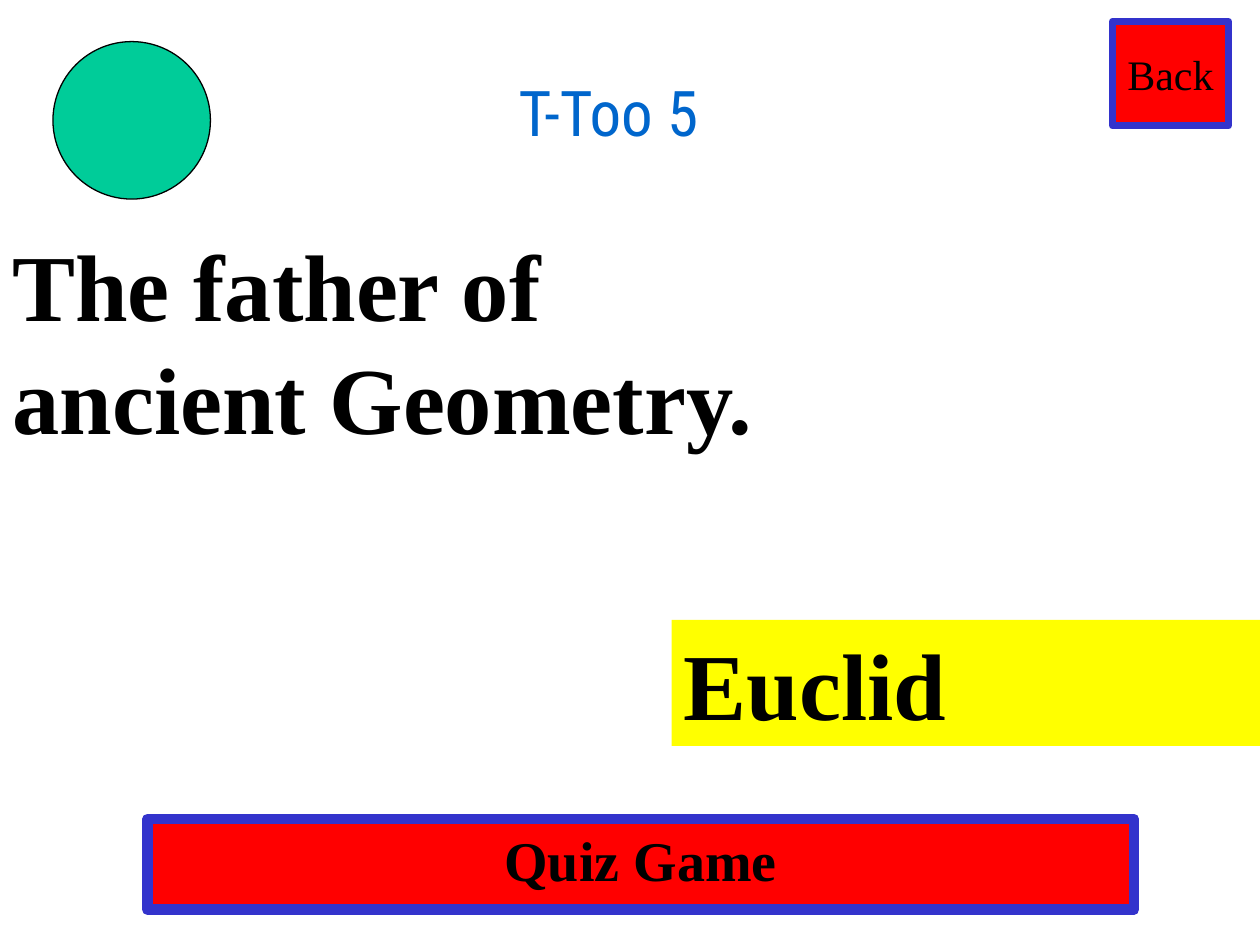
"""Build a quiz question slide with an answer bar and navigation buttons."""
from dataclasses import dataclass
from typing import Optional

from pptx import Presentation
from pptx.dml.color import RGBColor
from pptx.enum.shapes import MSO_SHAPE
from pptx.enum.text import MSO_ANCHOR, MSO_AUTO_SIZE, PP_ALIGN
from pptx.util import Inches, Pt

RED = RGBColor(0xFF, 0x00, 0x00)
BLUE = RGBColor(0x33, 0x33, 0xCC)
YELLOW = RGBColor(0xFF, 0xFF, 0x00)
GREEN = RGBColor(0x00, 0xCC, 0x99)
BLACK = RGBColor(0x00, 0x00, 0x00)
TITLE_BLUE = RGBColor(0x00, 0x66, 0xCC)
SERIF = "Times New Roman"


@dataclass
class Box:
    at: tuple[float, float, float, float]
    text: str = ""
    size: int = 54
    bold: bool = True
    align: PP_ALIGN = PP_ALIGN.LEFT
    anchor: MSO_ANCHOR = MSO_ANCHOR.TOP
    wrap: bool = True
    before: int = 0
    fill: Optional[RGBColor] = None
    line: Optional[RGBColor] = None
    width: float = 0
    shape: MSO_SHAPE = MSO_SHAPE.RECTANGLE


BOXES = [
    Box((1.17, 6.5, 7.83, 0.72), "Quiz Game", 32, align=PP_ALIGN.CENTER,
        before=4, fill=RED, line=BLUE, width=6),
    Box((8.83, 0.17, 0.92, 0.83), "Back", 24, False, PP_ALIGN.CENTER,
        MSO_ANCHOR.MIDDLE, wrap=False, fill=RED, line=BLUE, width=4),
    Box((0, 1.75, 6.67, 1.9), "The father of ancient Geometry.", before=6),
    Box((5.33, 4.92, 4.67, 1), "Euclid", before=6, fill=YELLOW),
    Box((0.42, 0.33, 1.25, 1.25), fill=GREEN, line=BLACK, width=0.75,
        shape=MSO_SHAPE.OVAL),
]


def set_all(obj, values: dict) -> None:
    """Set each named attribute on the object."""
    for name, value in values.items():
        setattr(obj, name, value)


def write(sp, text: str, frame: dict, para: dict, font: dict, color: RGBColor) -> None:
    """Fill a shape with one formatted paragraph."""
    tf = sp.text_frame
    set_all(tf, {"auto_size": MSO_AUTO_SIZE.NONE, **frame})
    p = tf.paragraphs[0]
    set_all(p, para)
    r = p.add_run()
    r.text = text
    set_all(r.font, font)
    r.font.color.rgb = color


def draw_box(s, box: Box) -> None:
    """Draw a box as a text box or a filled shape."""
    at = [Inches(v) for v in box.at]
    if box.fill is None:
        sp = s.shapes.add_textbox(*at)
    else:
        sp = s.shapes.add_shape(box.shape, *at)
        sp.shadow.inherit = False
        sp.fill.solid()
        sp.fill.fore_color.rgb = box.fill
        if box.line is None:
            sp.line.fill.background()
        else:
            sp.line.color.rgb = box.line
            sp.line.width = Pt(box.width)
    if box.text:
        write(sp, box.text,
              {"word_wrap": box.wrap, "vertical_anchor": box.anchor},
              {"alignment": box.align, "space_before": Pt(box.before)},
              {"name": SERIF, "size": Pt(box.size), "bold": box.bold}, BLACK)


def draw_title(s, text: str) -> None:
    """Place and format the title placeholder."""
    sp = s.shapes.title
    set_all(sp, {"left": Inches(2.33), "top": Inches(0.5),
                 "width": Inches(5), "height": Inches(0.62)})
    write(sp, text,
          {"word_wrap": False, "vertical_anchor": MSO_ANCHOR.TOP,
           "margin_top": Inches(0.08)},
          {"alignment": PP_ALIGN.CENTER, "space_before": Pt(0)},
          {"name": "Roboto Condensed", "size": Pt(36), "bold": False}, TITLE_BLUE)


def main() -> None:
    """Build and save the slide."""
    prs = Presentation()
    set_all(prs, {"slide_width": Inches(10), "slide_height": Inches(7.5)})
    s = prs.slides.add_slide(prs.slide_layouts[5])
    draw_title(s, "T-Too 5")
    for box in BOXES:
        draw_box(s, box)
    prs.save("out.pptx")


if __name__ == "__main__":
    main()
